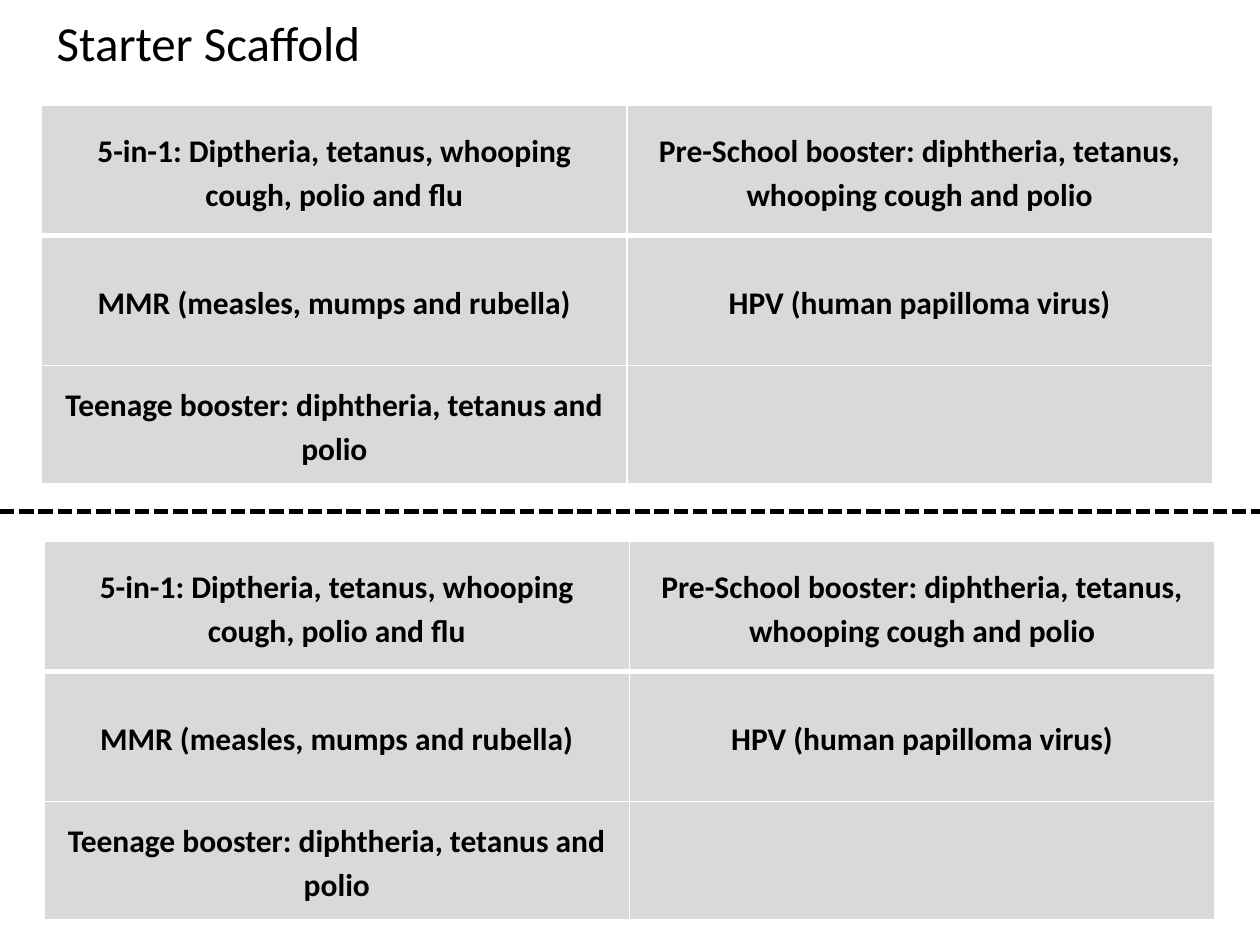
from lxml.etree import SubElement
from pptx import Presentation
from pptx.dml.color import RGBColor
from pptx.enum.dml import MSO_LINE
from pptx.enum.shapes import MSO_CONNECTOR
from pptx.enum.text import MSO_ANCHOR, MSO_AUTO_SIZE, PP_ALIGN
from pptx.oxml import parse_xml
from pptx.oxml.ns import nsdecls, qn
from pptx.util import Cm, Pt

TITLE = "Starter Scaffold"
VACCINES = [
    ("5-in-1: Diptheria, tetanus, whooping cough, polio and flu",
     "Pre-School booster: diphtheria, tetanus, whooping cough and polio"),
    ("MMR (measles, mumps and rubella)", "HPV (human papilloma virus)"),
    ("Teenage booster: diphtheria, tetanus and polio", ""),
]
SPOTS = [(0.84, 2.13), (0.89, 10.92)]
COL = 11.8
ROWS = [2.62, 2.62, 2.39]
FOLD = 10.31
WIDE, HIGH = 25.4, 19.05
BLACK, WHITE, GREY = "000000", "FFFFFF", "D9D9D9"


def color(code):
    return RGBColor.from_string(code)


def style(para, size, bold=False):
    for run in para.runs:
        run.font.name = "Calibri"
        run.font.size = Pt(size)
        run.font.bold = bold
        run.font.color.rgb = color(BLACK)


def add_rules(cell, top, base):
    """Draw white cell borders; top and base are widths in points."""
    props = cell._tc.get_or_add_tcPr()
    for spot, (side, width) in enumerate(
            [("L", 1), ("R", 1), ("T", top), ("B", base)]):
        props.insert(spot, parse_xml(
            f'<a:ln{side} {nsdecls("a")} w="{Pt(width)}"><a:solidFill>'
            f'<a:srgbClr val="{WHITE}"/></a:solidFill></a:ln{side}>'))


def add_grid(slide, left, top):
    grid = slide.shapes.add_table(
        len(ROWS), 2, Cm(left), Cm(top), Cm(2 * COL), Cm(sum(ROWS))).table
    for col in grid.columns:
        col.width = Cm(COL)
    for r, (high, texts) in enumerate(zip(ROWS, VACCINES)):
        grid.rows[r].height = Cm(high)
        for c, text in enumerate(texts):
            cell = grid.cell(r, c)
            cell.fill.solid()
            cell.fill.fore_color.rgb = color(GREY)
            add_rules(cell, 3 if r == 1 else 1, 3 if r == 0 else 1)
            cell.vertical_anchor = MSO_ANCHOR.MIDDLE
            cell.margin_left = cell.margin_right = Cm(0.18)
            cell.margin_top = cell.margin_bottom = 0
            cell.text_frame.text = text
            para = cell.text_frame.paragraphs[0]
            para.alignment = PP_ALIGN.CENTER
            para.line_spacing = 1.15
            style(para, 18, True)


def add_title(slide):
    title = slide.shapes.title
    title.left, title.top = Cm(0.89), Cm(0.13)
    title.width, title.height = Cm(6.71), Cm(1.45)
    frame = title.text_frame
    frame.text = TITLE
    frame.word_wrap = False
    frame.auto_size = MSO_AUTO_SIZE.SHAPE_TO_FIT_TEXT
    frame.vertical_anchor = MSO_ANCHOR.TOP
    frame.paragraphs[0].alignment = PP_ALIGN.LEFT
    style(frame.paragraphs[0], 28)


def add_fold(slide):
    fold = slide.shapes.add_connector(
        MSO_CONNECTOR.STRAIGHT, 0, Cm(FOLD), Cm(WIDE), Cm(FOLD))
    fold.line.color.rgb = color(BLACK)
    fold.line.width = Pt(2.75)
    fold.line.dash_style = MSO_LINE.SQUARE_DOT
    SubElement(fold._element.spPr, qn("a:effectLst"))


def main():
    deck = Presentation()
    deck.slide_width, deck.slide_height = Cm(WIDE), Cm(HIGH)
    slide = deck.slides.add_slide(deck.slide_layouts[5])
    add_title(slide)
    for left, top in SPOTS:
        add_grid(slide, left, top)
    add_fold(slide)
    deck.save("out.pptx")


if __name__ == "__main__":
    main()
